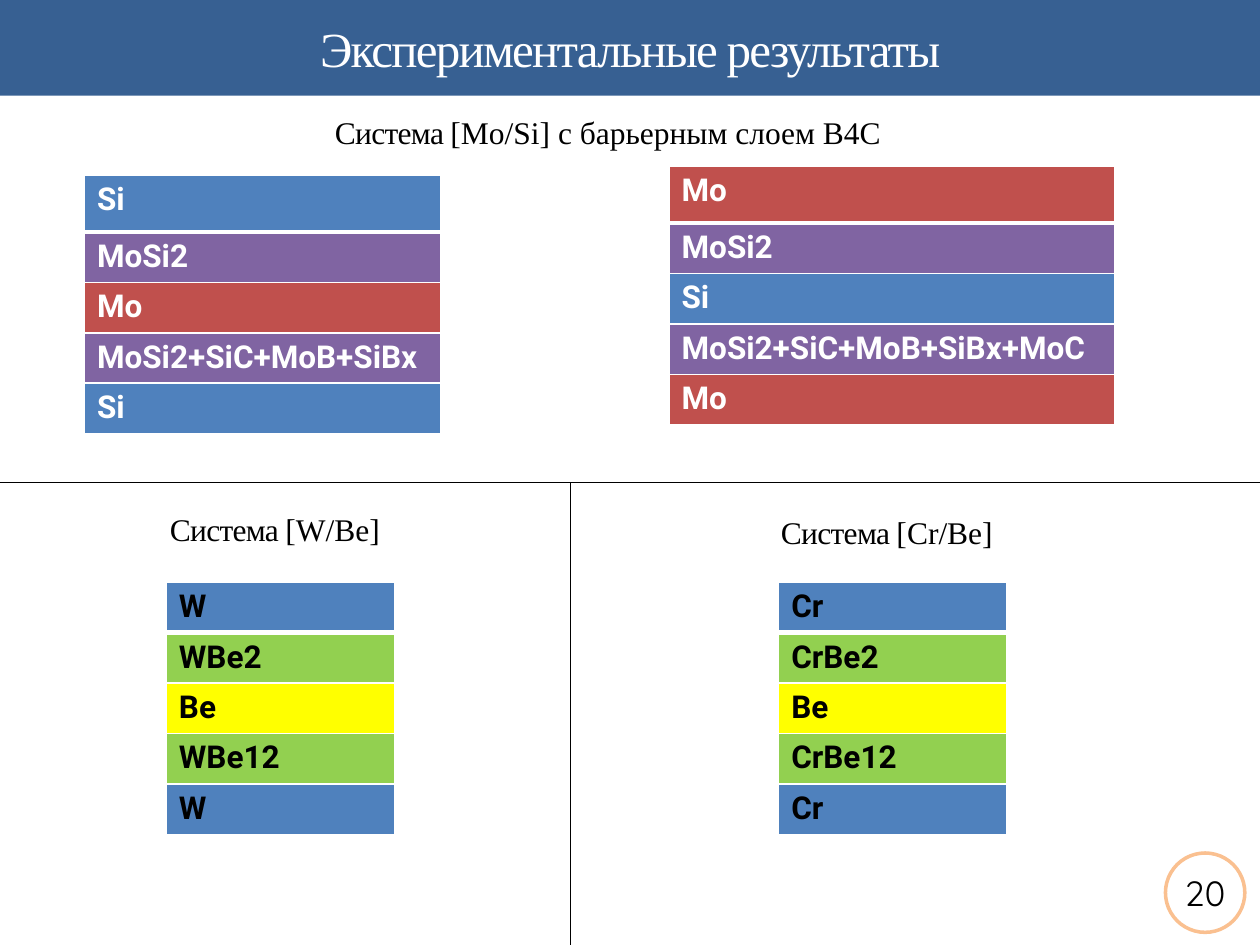
from lxml.etree import SubElement
from pptx import Presentation
from pptx.dml.color import RGBColor
from pptx.enum.shapes import MSO_CONNECTOR, MSO_SHAPE
from pptx.enum.text import MSO_ANCHOR, PP_ALIGN
from pptx.oxml.ns import qn
from pptx.util import Inches, Pt

THEME = {
    "white": "FFFFFF", "black": "000000", "header": "376092", "ring": "FAC090",
    "blue": "4F81BD", "purple": "8064A2", "red": "C0504D",
    "green": "92D050", "yellow": "FFFF00",
    "title": 28, "body": 18, "number": 20,
    "serif": "Times New Roman", "table": "Roboto", "round": "Quicksand",
}


def color(name):
    return RGBColor.from_string(THEME[name])


def add_run(p, text, font, size, ink, spacing=0, bold=False):
    r = p.add_run()
    r.text = text
    style = {"name": THEME[font], "size": Pt(THEME[size]), "bold": bold}
    for key, value in style.items():
        setattr(r.font, key, value)
    r.font.color.rgb = color(ink)
    if spacing:
        r.font._element.set("spc", str(spacing))


prs = Presentation()
prs.slide_width, prs.slide_height = Inches(10), Inches(7.5)
s = prs.slides.add_slide(prs.slide_layouts[6])

panels = [
    (MSO_SHAPE.RECTANGLE, (0, 0, 10, 0.76), "header", None,
     ("Экспериментальные результаты", "serif", "title", "white", -100)),
    (MSO_SHAPE.OVAL, (9.25, 6.77, 0.63, 0.63), "white", "ring",
     ("20", "round", "number", "black")),
]
for kind, box, fill, line, label in panels:
    sp = s.shapes.add_shape(kind, *map(Inches, box))
    sp.shadow.inherit = False
    sp.fill.solid()
    sp.fill.fore_color.rgb = color(fill)
    if line:
        sp.line.color.rgb = color(line)
        sp.line.width = Pt(2)
    else:
        sp.line.fill.background()
    tf = sp.text_frame
    tf.vertical_anchor = MSO_ANCHOR.MIDDLE
    for side in ("left", "right", "top", "bottom"):
        setattr(tf, f"margin_{side}", Inches(0.04))
    p = tf.paragraphs[0]
    p.alignment = PP_ALIGN.CENTER
    add_run(p, *label)

headings = [
    ((2.56, 0.8, 5, 0.45), "Mo/Si] с барьерным слоем B4C", True,
     {"alignment": PP_ALIGN.JUSTIFY, "line_spacing": 1.15}),
    ((1.25, 4, 1.94, 0.4), "W/Be]", False, {}),
    ((6.1, 4.02, 1.96, 0.4), "Cr/Be]", False, {}),
]
for box, system, wrap, layout in headings:
    tf = s.shapes.add_textbox(*map(Inches, box)).text_frame
    tf.word_wrap = wrap
    p = tf.paragraphs[0]
    for key, value in layout.items():
        setattr(p, key, value)
    add_run(p, "Система [", "serif", "body", "black", -40)
    add_run(p, system, "serif", "body", "black")

stacks = [
    (0.67, 1.39, 2.83, 0.45, "white",
     [("Si", "blue"), ("MoSi2", "purple"), ("Mo", "red"),
      ("MoSi2+SiC+MoB+SiBx", "purple"), ("Si", "blue")]),
    (5.31, 1.32, 3.54, 0.45, "white",
     [("Mo", "red"), ("MoSi2", "purple"), ("Si", "blue"),
      ("MoSi2+SiC+MoB+SiBx+MoC", "purple"), ("Mo", "red")]),
]
for left, metal in ((1.32, "W"), (6.18, "Cr")):
    stacks.append((left, 4.62, 1.81, 0.4, "black", [
        (metal, "blue"), (f"{metal}Be2", "green"), ("Be", "yellow"),
        (f"{metal}Be12", "green"), (metal, "blue")]))

for left, top, width, first, ink, layers in stacks:
    heights = [first] + [0.4] * (len(layers) - 1)
    box = (left, top, width, sum(heights))
    table = s.shapes.add_table(len(layers), 1, *map(Inches, box)).table
    for i, (text, fill) in enumerate(layers):
        table.rows[i].height = Inches(heights[i])
        cell = table.cell(i, 0)
        tcPr = cell._tc.get_or_add_tcPr()
        for side in "LRTB":
            thick = (i, side) in ((0, "B"), (1, "T"))
            ln = SubElement(tcPr, qn(f"a:ln{side}"), w=str(Pt(3 if thick else 1)))
            solid = SubElement(ln, qn("a:solidFill"))
            SubElement(solid, qn("a:srgbClr"), val=THEME["white"])
        cell.fill.solid()
        cell.fill.fore_color.rgb = color(fill)
        add_run(cell.text_frame.paragraphs[0], text, "table", "body", ink, bold=True)

for ends in ((0, 3.83, 10, 3.83), (4.53, 3.83, 4.53, 7.5)):
    line = s.shapes.add_connector(MSO_CONNECTOR.STRAIGHT, *map(Inches, ends))
    line.line.color.rgb = color("black")
    line.line.width = Pt(0.75)
    SubElement(line._element.spPr, qn("a:effectLst"))

prs.save("out.pptx")
